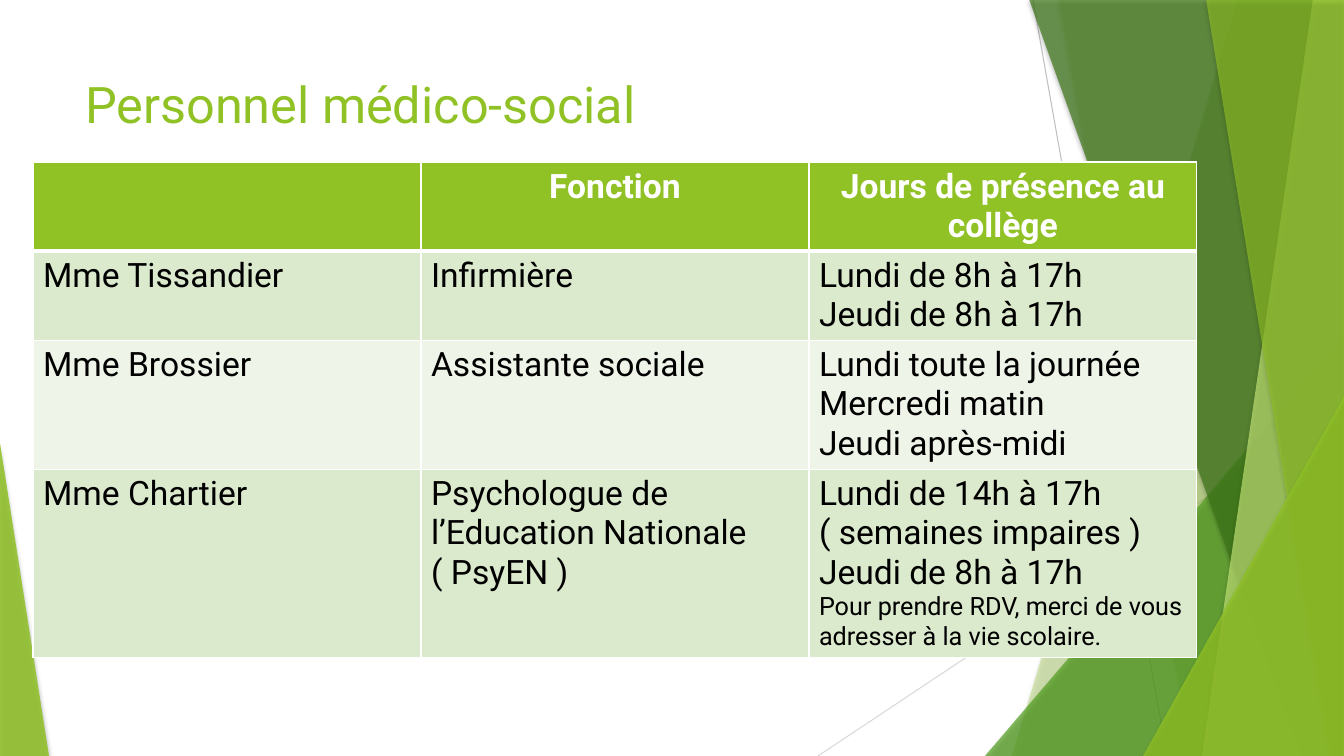
from dataclasses import dataclass

import pptx
import pptx.dml.color
import pptx.enum.shapes
import pptx.enum.text
import pptx.oxml
import pptx.oxml.ns
import pptx.oxml.xmlchemy
import pptx.presentation
import pptx.shapes.autoshape
import pptx.slide
import pptx.table
import pptx.util

EMU_PER_PX = 914400 / 100.8
SLIDE_WIDTH, SLIDE_HEIGHT = 1344, 756


@dataclass(frozen=True)
class Theme:
    font: str = "Roboto"
    lime: str = "90C226"
    green: str = "54A021"
    forest: str = "3F7819"
    pale_lime: str = "C0E474"
    row_dark: str = "DBE9CD"
    row_light: str = "EEF4E8"
    white: str = "FFFFFF"
    black: str = "000000"
    ray: str = "BFBFBF"
    pale_ray: str = "D9D9D9"
    title_size: int = 36
    body_size: int = 24
    note_size: int = 18
    ray_width: float = 0.75
    border_width: int = 1
    header_border_width: int = 3


@dataclass(frozen=True)
class Ray:
    start: tuple[int, int]
    end: tuple[int, int]
    color: str


@dataclass(frozen=True)
class Band:
    top_left: int
    top_right: int
    bottom_left: int
    color: str
    opacity: int


@dataclass(frozen=True)
class Triangle:
    left: int
    top: int
    width: int
    apex: int
    color: str
    opacity: int


@dataclass(frozen=True)
class CellText:
    lines: tuple[str, ...] = ()
    note: str = ""


THEME = Theme()

RAYS = [
    Ray((1033, 0), (1167, SLIDE_HEIGHT), THEME.ray),
    Ray((SLIDE_WIDTH, 406), (818, SLIDE_HEIGHT), THEME.pale_ray),
]

FACETS: list[Band | Triangle] = [
    Band(1238, SLIDE_WIDTH, 1012, THEME.lime, 30),
    Band(1058, SLIDE_WIDTH, 1191, THEME.lime, 20),
    Triangle(985, 336, 359, 1, THEME.green, 72),
    Band(1029, SLIDE_WIDTH, 1301, THEME.forest, 70),
    Band(1313, SLIDE_WIDTH, 1202, THEME.pale_lime, 70),
    Band(1206, SLIDE_WIDTH, 1329, THEME.lime, 65),
    Triangle(1143, 396, 201, 1, THEME.lime, 80),
    Triangle(0, 443, 49, 0, THEME.lime, 85),
]

COLUMN_WIDTH = 388
ROW_HEIGHTS = [88, 89, 129, 188]
STAFF_ROWS = [
    [CellText(), CellText(("Fonction",)), CellText(("Jours de présence au collège",))],
    [
        CellText(("Mme Tissandier",)),
        CellText(("Infirmière",)),
        CellText(("Lundi de 8h à 17h", "Jeudi de 8h à 17h")),
    ],
    [
        CellText(("Mme Brossier",)),
        CellText(("Assistante sociale",)),
        CellText(("Lundi toute la journée", "Mercredi matin", "Jeudi après-midi")),
    ],
    [
        CellText(("Mme Chartier",)),
        CellText(("Psychologue de l’Education Nationale", "( PsyEN )")),
        CellText(
            ("Lundi de 14h à 17h", "( semaines impaires )", "Jeudi de 8h à 17h"),
            "Pour prendre RDV, merci de vous adresser à la vie scolaire.",
        ),
    ],
]


def px(length: int) -> pptx.util.Emu:
    return pptx.util.Emu(round(length * EMU_PER_PX))


def rgb(color: str) -> pptx.dml.color.RGBColor:
    return pptx.dml.color.RGBColor.from_string(color)


def xml(source: str) -> pptx.oxml.xmlchemy.BaseOxmlElement:
    tag, rest = source.split(" ", 1)
    return pptx.oxml.parse_xml(f"{tag} {pptx.oxml.ns.nsdecls('a')} {rest}")


def format_runs(paragraph, size: int, color: str, bold: bool = False) -> None:
    for run in paragraph.runs:
        run.font.name = THEME.font
        run.font.size = pptx.util.Pt(size)
        run.font.color.rgb = rgb(color)
        run.font.bold = bold


def draw_ray(slide: pptx.slide.Slide, ray: Ray) -> None:
    connector = slide.shapes.add_connector(
        pptx.enum.shapes.MSO_CONNECTOR.STRAIGHT, *map(px, ray.start + ray.end)
    )
    connector.line.color.rgb = rgb(ray.color)
    connector.line.width = pptx.util.Pt(THEME.ray_width)
    connector.element.spPr.append(xml("<a:effectLst />"))


def add_outline(slide: pptx.slide.Slide, facet: Band | Triangle) -> pptx.shapes.autoshape.Shape:
    if isinstance(facet, Band):
        builder = slide.shapes.build_freeform(facet.top_left, -1, EMU_PER_PX)
        builder.add_line_segments([
            (facet.top_right, -1),
            (SLIDE_WIDTH, SLIDE_HEIGHT),
            (facet.bottom_left, SLIDE_HEIGHT),
        ])
        return builder.convert_to_shape()
    shape = slide.shapes.add_shape(
        pptx.enum.shapes.MSO_SHAPE.ISOSCELES_TRIANGLE,
        px(facet.left), px(facet.top), px(facet.width), px(SLIDE_HEIGHT - facet.top),
    )
    shape.adjustments[0] = facet.apex
    return shape


def draw_facet(slide: pptx.slide.Slide, facet: Band | Triangle) -> None:
    shape = add_outline(slide, facet)
    shape.fill.solid()
    shape.fill.fore_color.rgb = rgb(facet.color)
    shape.line.fill.background()
    shape.shadow.inherit = False
    properties = shape.element.spPr
    fill_color = properties.find(".//" + pptx.oxml.ns.qn("a:srgbClr"))
    fill_color.append(xml(f'<a:alpha val="{facet.opacity * 1000}"/>'))
    properties.find(pptx.oxml.ns.qn("a:effectLst")).append(xml(
        '<a:outerShdw blurRad="38100" dist="25400" dir="5400000" rotWithShape="0">'
        f'<a:srgbClr val="{THEME.black}"><a:alpha val="35000"/></a:srgbClr></a:outerShdw>'
    ))


def draw_title(slide: pptx.slide.Slide) -> None:
    title = slide.shapes.title
    title.left, title.top, title.width, title.height = map(px, (75, 68, 948, 94))
    frame = title.text_frame
    frame.text = "Personnel médico-social"
    frame.auto_size = pptx.enum.text.MSO_AUTO_SIZE.NONE
    frame.vertical_anchor = pptx.enum.text.MSO_ANCHOR.TOP
    frame.paragraphs[0].alignment = pptx.enum.text.PP_ALIGN.LEFT
    format_runs(frame.paragraphs[0], THEME.title_size, THEME.lime)


def draw_borders(cell: pptx.table._Cell, row: int) -> None:
    thick_side = {0: "B", 1: "T"}.get(row)
    for side in "LRTB":
        points = THEME.header_border_width if side == thick_side else THEME.border_width
        cell._tc.get_or_add_tcPr().append(xml(
            f'<a:ln{side} w="{pptx.util.Pt(points)}"><a:solidFill>'
            f'<a:srgbClr val="{THEME.white}"/></a:solidFill></a:ln{side}>'
        ))


def fill_cell(cell: pptx.table._Cell, content: CellText, row: int) -> None:
    header = row == 0
    draw_borders(cell, row)
    cell.fill.solid()
    body_fill = THEME.row_dark if row % 2 else THEME.row_light
    cell.fill.fore_color.rgb = rgb(THEME.lime if header else body_fill)
    cell.text = "\n".join(content.lines + ((content.note,) if content.note else ()))
    for index, paragraph in enumerate(cell.text_frame.paragraphs):
        size = THEME.body_size if index < len(content.lines) else THEME.note_size
        align = pptx.enum.text.PP_ALIGN
        paragraph.alignment = align.CENTER if header else align.LEFT
        format_runs(paragraph, size, THEME.white if header else THEME.black, header)


def draw_staff_table(slide: pptx.slide.Slide) -> None:
    columns = len(STAFF_ROWS[0])
    table = slide.shapes.add_table(
        len(STAFF_ROWS), columns,
        px(33), px(162), px(columns * COLUMN_WIDTH), px(sum(ROW_HEIGHTS)),
    ).table
    for column in table.columns:
        column.width = px(COLUMN_WIDTH)
    for row, (height, contents) in enumerate(zip(ROW_HEIGHTS, STAFF_ROWS)):
        table.rows[row].height = px(height)
        for column, content in enumerate(contents):
            fill_cell(table.cell(row, column), content, row)


def main() -> None:
    presentation = pptx.Presentation()
    presentation.slide_width, presentation.slide_height = px(SLIDE_WIDTH), px(SLIDE_HEIGHT)
    slide = presentation.slides.add_slide(presentation.slide_layouts[5])
    for ray in RAYS:
        draw_ray(slide, ray)
    for facet in FACETS:
        draw_facet(slide, facet)
    draw_title(slide)
    draw_staff_table(slide)
    presentation.save("out.pptx")


if __name__ == "__main__":
    main()
